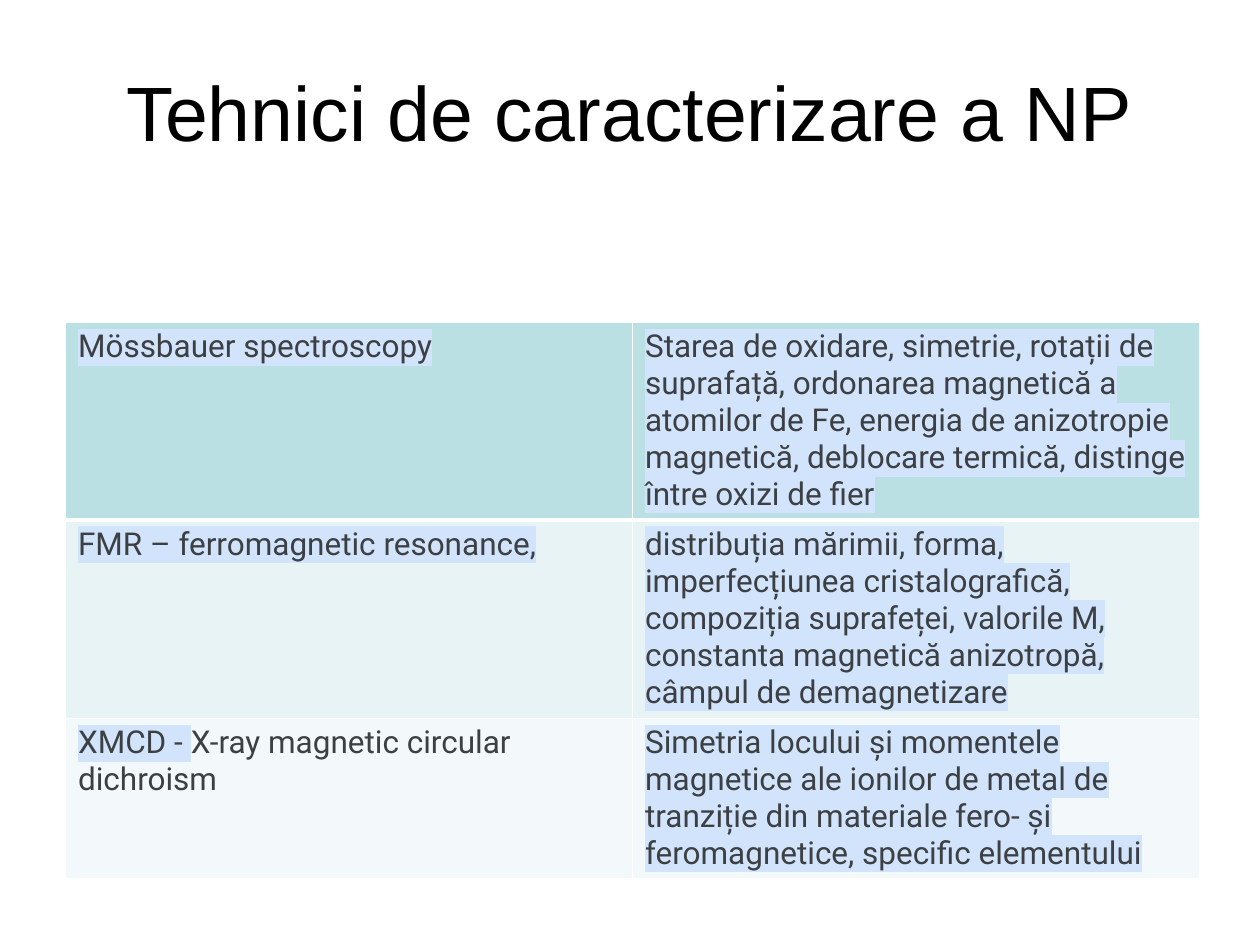
from lxml import etree
from pptx import Presentation
from pptx import util as u
from pptx.dml.color import RGBColor
from pptx.enum import text
from pptx.oxml import ns


def paint(target, color):
    """Solid fill for a cell, or the colour of a font."""
    fill = target.fill
    fill.solid()
    fill.fore_color.rgb = RGBColor.from_string(color)


def add_solid(parent, tag, color):
    """Append a colour element and return it."""
    el = etree.SubElement(parent, ns.qn(tag))
    etree.SubElement(el, ns.qn("a:srgbClr")).set("val", color)
    return el


prs = Presentation()
prs.slide_width, prs.slide_height = u.Cm(25.4), u.Cm(19.05)
s = prs.slides.add_slide(prs.slide_layouts[5])

# Title
title = s.shapes.title
title.left, title.top = u.Cm(1.27), u.Cm(0.64)
title.width, title.height = u.Cm(22.86), u.Cm(3.18)
tf = title.text_frame
tf.text = "Tehnici de caracterizare a NP"
tf.vertical_anchor = text.MSO_ANCHOR.MIDDLE
p = tf.paragraphs[0]
p.alignment = text.PP_ALIGN.CENTER
r = p.runs[0]
r.font.name, r.font.size = "Arial", u.Pt(44)
paint(r.font, "000000")

# Rows: height, fill, then the runs of each cell as (words, highlighted)
rows = [
    (3.96, "BBE0E3",
     [("Mössbauer spectroscopy", True)],
     [("Starea de oxidare, simetrie, rotații de suprafață, ordonarea magnetică "
       "a atomilor de Fe, energia de anizotropie magnetică, deblocare termică, "
       "distinge între oxizi de fier", True)]),
    (4, "E7F3F4",
     [("FMR – ferromagnetic resonance,", True)],
     [("distribuția mărimii, forma, imperfecțiunea cristalografică, compoziția "
       "suprafeței, valorile M, constanta magnetică anizotropă, câmpul de "
       "demagnetizare", True)]),
    (3.23, "F3F9FA",
     [("XMCD - ", True), ("X-ray magnetic circular dichroism", False)],
     [("Simetria locului și momentele magnetice ale ionilor de metal de "
       "tranziție din materiale fero- și feromagnetice, specific elementului",
       True)]),
]

# Table
table = s.shapes.add_table(len(rows), 2, u.Cm(1.32), u.Cm(6.5), u.Cm(22.86),
                           u.Cm(sum(row[0] for row in rows))).table
for column in table.columns:
    column.width = u.Cm(11.43)

for i, (height, color, *cells) in enumerate(rows):
    table.rows[i].height = u.Cm(height)
    for j, runs in enumerate(cells):
        cell = table.cell(i, j)
        paint(cell, color)

        # White borders, with a thicker rule between the first two rows
        tcPr = cell._tc.get_or_add_tcPr()
        for n, side in enumerate(("lnL", "lnR", "lnT", "lnB")):
            thick = (i, side) in ((0, "lnB"), (1, "lnT"))
            ln = etree.Element(ns.qn("a:" + side))
            ln.set("w", str(u.Pt(3 if thick else 1)))
            add_solid(ln, "a:solidFill", "FFFFFF")
            tcPr.insert(n, ln)

        # Cell text, with highlight placed before the font name
        p = cell.text_frame.paragraphs[0]
        for words, highlighted in runs:
            r = p.add_run()
            r.text = words
            r.font.size, r.font.bold = u.Pt(18), False
            paint(r.font, "3C4043")
            if highlighted:
                add_solid(r.font._element, "a:highlight", "D2E3FC")
            r.font.name = "Roboto"

prs.save("out.pptx")
